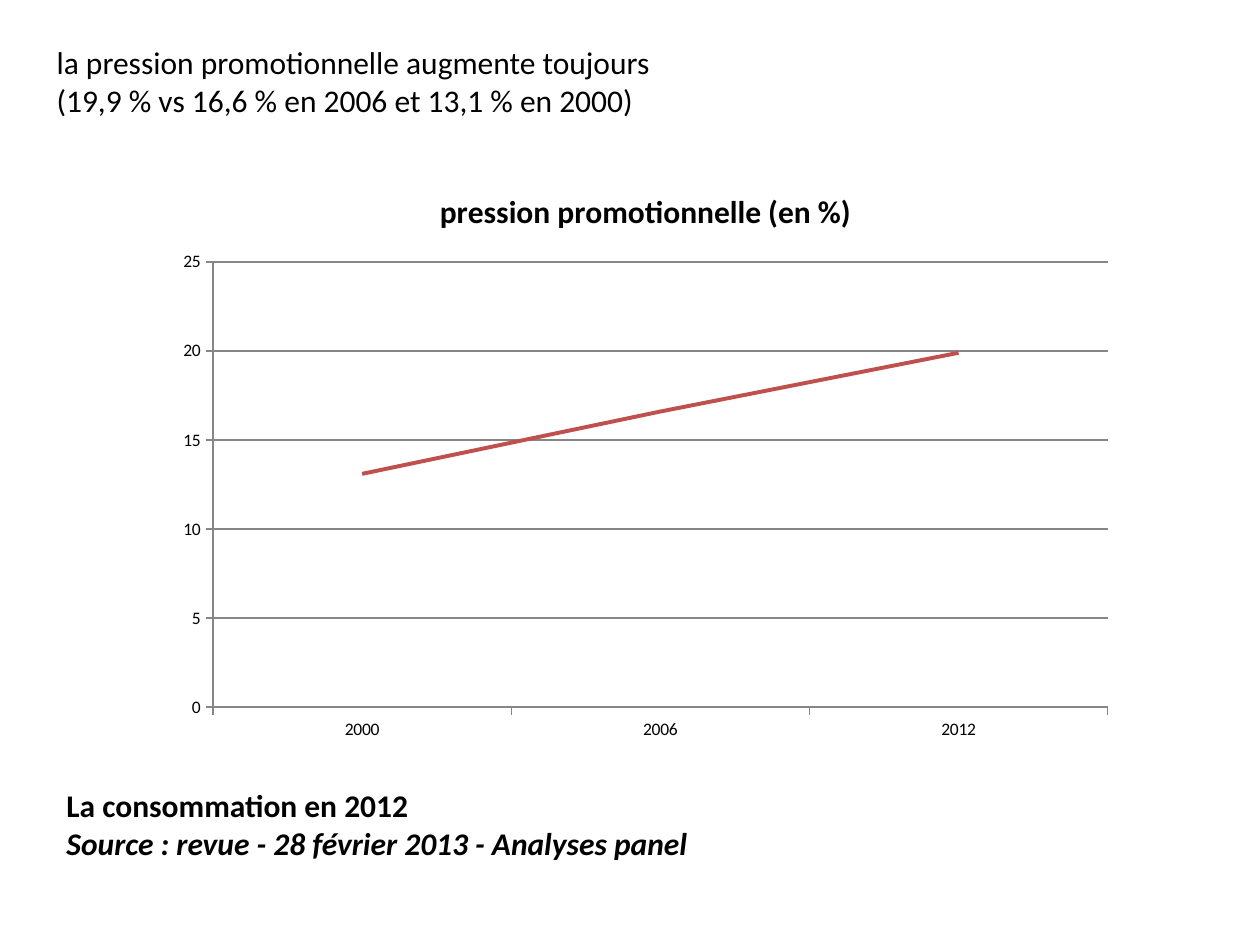
import pptx
import pptx.chart.data
import pptx.dml.color
import pptx.enum.chart
import pptx.enum.text
import pptx.util

HEADLINE = ("la pression promotionnelle augmente toujours "
            "(19,9 % vs 16,6 % en 2006 et 13,1 % en 2000)")
# text, italic
SOURCE_LINES = [
    ("La consommation en 2012", False),
    ("Source : revue - 28 février 2013 - Analyses panel", True),
]
CHART_TITLE = "pression promotionnelle (en %)"
PRESSURE = {"2000": 13.1, "2006": 16.6, "2012": 19.9}

# left, top, width, height in px
HEADLINE_BOX = (44, 37, 630, 89)
SOURCE_BOX = (54, 780, 684, 89)
CHART_BOX = (164, 165, 963, 586)

BLACK = pptx.dml.color.RGBColor(0x00, 0x00, 0x00)
GREY = pptx.dml.color.RGBColor(0x86, 0x86, 0x86)
RED = pptx.dml.color.RGBColor(0xC0, 0x50, 0x4D)
FONT = "Calibri"
TEXT_SIZE = 18
LABEL_SIZE = 10
PX = pptx.util.Inches(1) / 126


def emu(box):
    return [round(length * PX) for length in box]


def style(font, size, bold=False, italic=False):
    font.name = FONT
    font.size = pptx.util.Pt(size)
    font.bold = bold
    font.italic = italic
    font.color.rgb = BLACK


def add_headline(slide):
    headline = slide.shapes.title
    headline.left, headline.top, headline.width, headline.height = emu(HEADLINE_BOX)
    frame = headline.text_frame
    frame.text = HEADLINE
    frame.word_wrap = True
    frame.auto_size = pptx.enum.text.MSO_AUTO_SIZE.NONE
    frame.vertical_anchor = pptx.enum.text.MSO_ANCHOR.TOP
    frame.paragraphs[0].alignment = pptx.enum.text.PP_ALIGN.LEFT
    style(frame.paragraphs[0].runs[0].font, TEXT_SIZE)


def add_source(slide):
    frame = slide.shapes.add_textbox(*emu(SOURCE_BOX)).text_frame
    frame.word_wrap = True
    frame.text = "\v".join(text for text, _ in SOURCE_LINES)
    for run, (_, italic) in zip(frame.paragraphs[0].runs, SOURCE_LINES):
        style(run.font, TEXT_SIZE, bold=True, italic=italic)


def add_pressure_chart(slide):
    data = pptx.chart.data.CategoryChartData()
    data.categories = list(PRESSURE)
    data.add_series(CHART_TITLE, list(PRESSURE.values()))
    chart = slide.shapes.add_chart(
        pptx.enum.chart.XL_CHART_TYPE.LINE, *emu(CHART_BOX), data).chart
    style(chart.font, LABEL_SIZE)
    chart.has_legend = False

    chart.has_title = True
    title = chart.chart_title.text_frame
    title.text = CHART_TITLE
    style(title.paragraphs[0].runs[0].font, TEXT_SIZE, bold=True)

    values = chart.value_axis
    values.minimum_scale, values.maximum_scale, values.major_unit = 0, 25, 5
    values.has_major_gridlines = True
    lines = [values.major_gridlines.format.line]
    for axis in (values, chart.category_axis):
        axis.major_tick_mark = pptx.enum.chart.XL_TICK_MARK.OUTSIDE
        axis.minor_tick_mark = pptx.enum.chart.XL_TICK_MARK.NONE
        lines.append(axis.format.line)
    for line in lines:
        line.color.rgb = GREY
        line.width = pptx.util.Pt(0.75)

    plot = chart.plots[0]
    plot.vary_by_categories = False
    pressure = plot.series[0]
    pressure.smooth = False
    pressure.marker.style = pptx.enum.chart.XL_MARKER_STYLE.NONE
    pressure.format.line.color.rgb = RED
    pressure.format.line.width = pptx.util.Pt(2.25)


def main():
    deck = pptx.Presentation()
    deck.slide_width = pptx.util.Inches(10)
    deck.slide_height = pptx.util.Inches(7.5)
    slide = deck.slides.add_slide(deck.slide_layouts.get_by_name("Title Only"))
    add_headline(slide)
    add_source(slide)
    add_pressure_chart(slide)
    deck.save("out.pptx")


if __name__ == "__main__":
    main()
